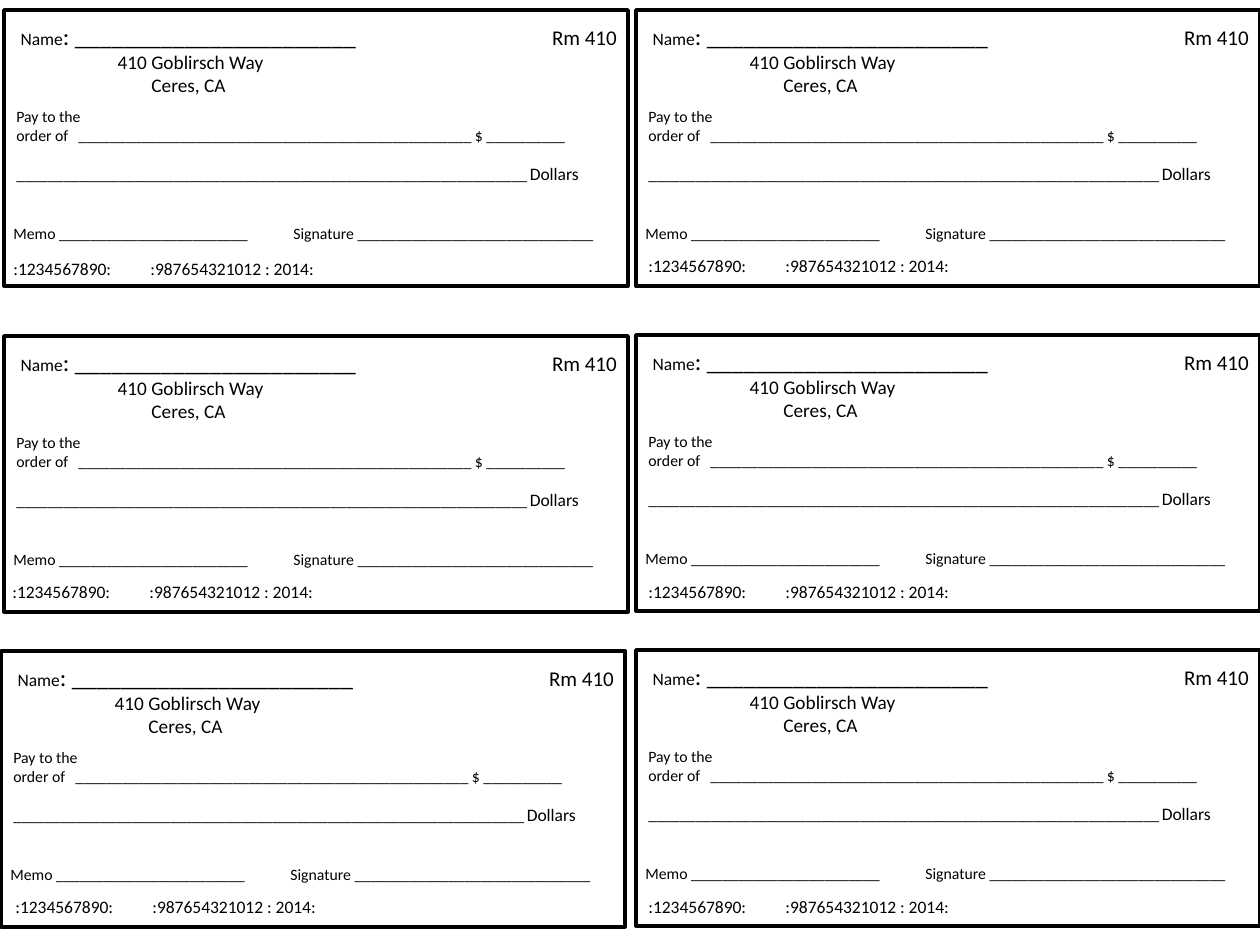
from lxml import etree
from pptx import Presentation
from pptx import util as u
from pptx.dml.color import RGBColor
from pptx.enum import shapes, text
from pptx.oxml.ns import qn

PX = 914400 // 126
BLACK = RGBColor(0, 0, 0)
FONT = "Calibri"
CARD_WIDTH, CARD_HEIGHT = 624, 276

# Left and top of each check, then of its account number line
CHECKS = [
    ((4, 10), (1, 252)),
    ((636, 10), (636, 249)),
    ((4, 336), (0, 575)),
    ((1, 651), (3, 890)),
    ((636, 335), (636, 575)),
    ((636, 650), (636, 890)),
]

# Offset and size of each field, its alignment, tab stop and paragraphs of (text, size) runs
LEFT, CENTER = text.PP_ALIGN.LEFT, text.PP_ALIGN.CENTER
FIELDS = [
    ((3, 5, 363, 86), CENTER, None, [
        [("Name", 10), (": " + "_" * 23, 14)],
        [(" 410 Goblirsch Way", 11)],
        [("Ceres, CA", 11)],
    ]),
    ((0, 91, CARD_WIDTH, 50), LEFT, 62, [
        [("Pay to the", 9)],
        [("order of\t" + "_" * 50 + " $ " + "_" * 10, 9)],
    ]),
    ((0, 147, CARD_WIDTH, 34), LEFT, None, [
        [("_" * 65 + " ", 9), ("Dollars", 10)],
    ]),
    ((-3, 208, CARD_WIDTH, 32), LEFT, 280, [
        [("Memo " + "_" * 24 + "\tSignature " + "_" * 30, 9)],
    ]),
    ((529, 8, 103, 38), CENTER, None, [[("Rm 410", 12)]]),
]
ACCOUNT_LINE = [[(":1234567890:\t:987654321012 : 2014:", 10)]]


def px(*lengths):
    return [u.Emu(length * PX) for length in lengths]


def add_tab_stop(paragraph, position):
    properties = paragraph._p.get_or_add_pPr()
    tabs = etree.SubElement(properties, qn("a:tabLst"))
    etree.SubElement(tabs, qn("a:tab"), pos=str(position * PX), algn="l")


def add_border(group, left, top):
    border = group.shapes.add_shape(
        shapes.MSO_SHAPE.RECTANGLE, *px(left, top, CARD_WIDTH, CARD_HEIGHT))
    border.shadow.inherit = False
    border.fill.background()
    border.line.color.rgb = BLACK
    border.line.width = u.Pt(2)


def add_field(group, box, alignment, tab_stop, paragraphs):
    frame = group.shapes.add_textbox(*px(*box)).text_frame
    frame.word_wrap = True
    frame.auto_size = text.MSO_AUTO_SIZE.SHAPE_TO_FIT_TEXT
    for index, runs in enumerate(paragraphs):
        paragraph = frame.add_paragraph() if index else frame.paragraphs[0]
        paragraph.alignment = alignment
        if tab_stop:
            add_tab_stop(paragraph, tab_stop)
        for wording, size in runs:
            run = paragraph.add_run()
            run.text = wording
            run.font.name = FONT
            run.font.size = u.Pt(size)
            run.font.color.rgb = BLACK


def add_check(slide, corner, account_corner):
    left, top = corner
    group = slide.shapes.add_group_shape()
    add_border(group, left, top)
    for (dx, dy, width, height), alignment, tab_stop, paragraphs in FIELDS:
        box = (left + dx, top + dy, width, height)
        add_field(group, box, alignment, tab_stop, paragraphs)
    add_field(group, (*account_corner, CARD_WIDTH, 34), LEFT, 137, ACCOUNT_LINE)


def main():
    presentation = Presentation()
    presentation.slide_width, presentation.slide_height = px(1260, 945)
    slide = presentation.slides.add_slide(presentation.slide_layouts[6])
    for corner, account_corner in CHECKS:
        add_check(slide, corner, account_corner)
    presentation.save("out.pptx")


if __name__ == "__main__":
    main()
